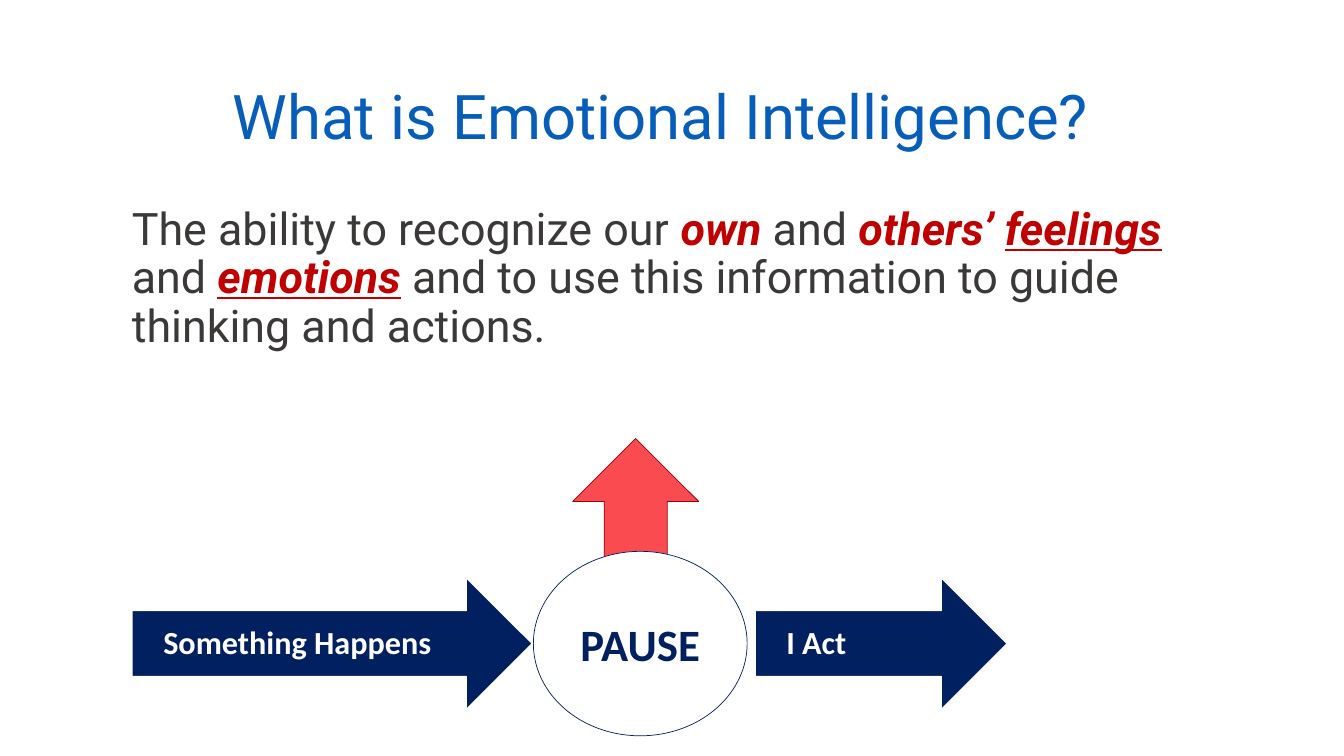
from pptx import Presentation
from pptx.dml.color import RGBColor
from pptx.enum.shapes import MSO_SHAPE
from pptx.enum.text import MSO_ANCHOR, PP_ALIGN
from pptx.util import Pt

PX = 9144  # EMU in one px, 100 px to the inch
UP, RIGHT, OVAL = MSO_SHAPE.UP_ARROW, MSO_SHAPE.RIGHT_ARROW, MSO_SHAPE.OVAL
TOP, MIDDLE = MSO_ANCHOR.TOP, MSO_ANCHOR.MIDDLE
LEFT, CENTER = PP_ALIGN.LEFT, PP_ALIGN.CENTER

NAVY, WHITE, RED, GRAY = "002060", "FFFFFF", "C00000", "3B3838"

# Text, marked, underlined
MEANING = [
    ("The ability to recognize our ", False, False),
    ("own", True, False),
    (" and ", False, False),
    ("others’ ", True, False),
    ("feelings", True, True),
    (" and ", False, False),
    ("emotions", True, True),
    (" and to use this information to guide thinking and actions.", False, False),
]


def color(code):
    return RGBColor.from_string(code)


def emu(*sizes):
    return [size * PX for size in sizes]


def set_frame(shape, anchor, left=10, right=10, edge=5):
    frame = shape.text_frame
    frame.word_wrap = True
    frame.vertical_anchor = anchor
    frame.margin_left, frame.margin_right = emu(left, right)
    frame.margin_top = frame.margin_bottom = edge * PX
    return frame.paragraphs[0]


def set_font(para, name, size, tint, bold=False):
    font = para.font
    font.name, font.size, font.bold = name, Pt(size), bold
    font.color.rgb = color(tint)


def add_title(slide, x, y, w, h):
    box = slide.shapes.add_textbox(*emu(x, y, w, h))
    para = set_frame(box, MIDDLE, left=110)
    para.text = "What is Emotional Intelligence?"
    para.line_spacing = 0.9
    set_font(para, "Roboto", 44, "065DBA")


def add_body(slide, x, y, w, h):
    box = slide.shapes.add_textbox(*emu(x, y, w, h))
    para = set_frame(box, TOP)
    para.line_spacing = 0.9
    set_font(para, "Roboto", 32, GRAY)
    for text, marked, under in MEANING:
        run = para.add_run()
        run.text = text
        font = run.font
        font.name, font.size = "Roboto", Pt(32)
        font.bold = font.italic = marked
        font.underline = under
        font.color.rgb = color(RED if marked else GRAY)


def add_part(slide, kind, box, fill, line, width):
    part = slide.shapes.add_shape(kind, *emu(*box))
    part.shadow.inherit = False
    part.fill.solid()
    part.fill.fore_color.rgb = color(fill)
    part.line.color.rgb = color(line)
    part.line.width = Pt(width)
    return part


def add_step(slide, box, label):
    arrow = add_part(slide, RIGHT, box, NAVY, WHITE, 1)
    para = set_frame(arrow, MIDDLE, left=31, right=40, edge=0)
    para.text = label
    para.alignment = LEFT
    para.line_spacing = 0.9
    set_font(para, "Calibri", 23, WHITE, bold=True)


def add_flow(slide, x, y):
    # Arrows, with the pause circle in front
    add_part(slide, UP, (x + 437, y, 125, 138), "FA4B51", "940409", 0.5)
    add_step(slide, (x + 618, y + 138, 250, 131), "I Act")
    add_step(slide, (x, y + 138, 397, 131), "Something Happens")
    pause = add_part(slide, OVAL, (x + 398, y + 112, 212, 183), WHITE, NAVY, 0.5)
    para = set_frame(pause, MIDDLE)
    para.text = "PAUSE"
    para.alignment = CENTER
    set_font(para, "Calibri", 32, NAVY, bold=True)


def main():
    deck = Presentation()
    deck.slide_width, deck.slide_height = emu(1333, 750)
    slide = deck.slides.add_slide(deck.slide_layouts[6])
    add_title(slide, 121, 52, 1120, 133)
    add_body(slide, 121, 200, 1120, 160)
    add_flow(slide, 131, 435)
    deck.save("out.pptx")


if __name__ == "__main__":
    main()
